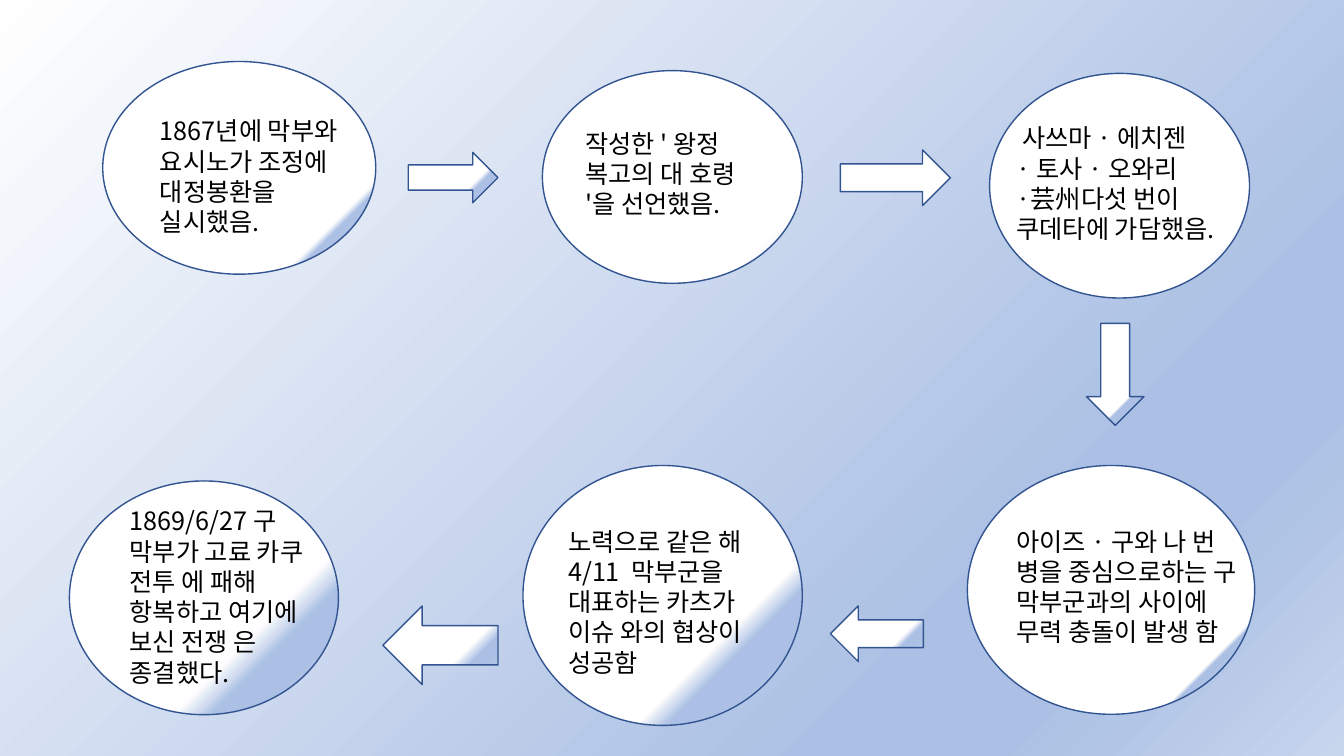
from lxml.etree import SubElement
from pptx import Presentation
from pptx.dml.color import RGBColor
from pptx.enum.shapes import MSO_SHAPE
from pptx.enum.text import MSO_AUTO_SIZE
from pptx.oxml.ns import qn
from pptx.util import Cm, Pt

# Content: oval box, text box (left, top, width, height in cm), fade, words
# A fade gives the percent where white ends and where blue starts
# In the words, \v starts a new line within the paragraph
STEPS = [
    ((2.59, 1.55, 6.88, 5.36), (3.78, 2.79, 5.26, 3.33), (81, 83),
     "1867년에 막부와 요시노가 조정에 대정봉환을 실시했음."),
    ((13.67, 1.78, 6.55, 5.36), (14.5, 3.1, 4.88, 2.57), (83, None),
     "작성한 ' 왕정 복고의 대 호령 '을 선언했음."),
    ((24.94, 1.85, 6.55, 5.66), (25.37, 2.97, 5.44, 3.33), (83, None),
     " 사쓰마 · 에치젠\v· 토사 · 오와리\v·芸州다섯 번이\v쿠데타에 가담했음."),
    ((24.38, 11.73, 7.24, 6.27), (25.37, 13.13, 6.27, 4.11), (82, 83),
     "아이즈 · 구와 나 번 병을 중심으로하는 구 막부군과의 사이에 무력 충돌이 발생 함"),
    ((13.18, 11.73, 7.04, 6.55), (14.07, 13.13, 5.72, 4.11), (69, 75),
     "노력으로 같은 해 4/11  막부군을 대표하는 카츠가 이슈 와의 협상이 성공함"),
    ((1.75, 12.12, 6.78, 5.89), (3.02, 12.62, 4.9, 4.88), (67, 75),
     "1869/6/27 구 막부가 고료 카쿠 전투 에 패해 항복하고 여기에 보신 전쟁 은 종결했다."),
]
ARROWS = [
    (MSO_SHAPE.RIGHT_ARROW, (10.29, 3.84, 2.26, 1.27), (69, 74)),
    (MSO_SHAPE.RIGHT_ARROW, (21.18, 3.78, 2.77, 1.4), (83, None)),
    (MSO_SHAPE.DOWN_ARROW, (27.38, 8.15, 1.45, 2.57), (73, 75)),
    (MSO_SHAPE.LEFT_ARROW, (20.93, 15.27, 2.34, 1.4), (69, 75)),
    (MSO_SHAPE.LEFT_ARROW, (9.65, 15.27, 2.9, 1.98), (66, 75)),
]
WHITE, BLUE, PALE = "FFFFFF", "ABC0E4", "C7D5ED"
EDGE, INK = "325491", "000000"
FONT = "Noto Sans CJK KR"


def color(code):
    return RGBColor.from_string(code)


def shade(fill, root, fade):
    """Fill from white at top left to blue at bottom right."""
    white, blue = fade
    stops = [(white, WHITE), (100, PALE)]
    if blue:
        stops[1:1] = [(blue, BLUE), (83, BLUE)]
    fill.gradient()
    fill.gradient_angle = 315
    group = root.find(".//" + qn("a:gsLst"))
    for old in list(group):
        group.remove(old)
    for place, code in stops:
        stop = SubElement(group, qn("a:gs"), pos=str(place * 1000))
        SubElement(stop, qn("a:srgbClr"), val=code)


def draw(slide, kind, box, fade):
    shape = slide.shapes.add_shape(kind, *map(Cm, box))
    shape.shadow.inherit = False
    shade(shape.fill, shape.element, fade)
    shape.line.color.rgb = color(EDGE)
    shape.line.width = Pt(1)


def write(slide, text, box, size=18, ink=INK, font=FONT):
    frame = slide.shapes.add_textbox(*map(Cm, box)).text_frame
    frame.word_wrap = True
    frame.auto_size = MSO_AUTO_SIZE.SHAPE_TO_FIT_TEXT
    para = frame.paragraphs[0]
    para.text = text
    for run in para.runs:
        run.font.size = Pt(size)
        run.font.color.rgb = color(ink)
        run.font.name = font
        SubElement(run.font._element, qn("a:ea"), typeface=font)


def main():
    deck = Presentation()
    deck.slide_width, deck.slide_height = Cm(33.87), Cm(19.05)
    slide = deck.slides.add_slide(deck.slide_layouts[6])
    shade(slide.background.fill, slide.element, (0, 75))

    # Ovals with their text
    for oval, box, fade, text in STEPS:
        draw(slide, MSO_SHAPE.OVAL, oval, fade)
        write(slide, text, box)

    # Arrows between the ovals
    for kind, box, fade in ARROWS:
        draw(slide, kind, box, fade)

    deck.save("out.pptx")


if __name__ == "__main__":
    main()
